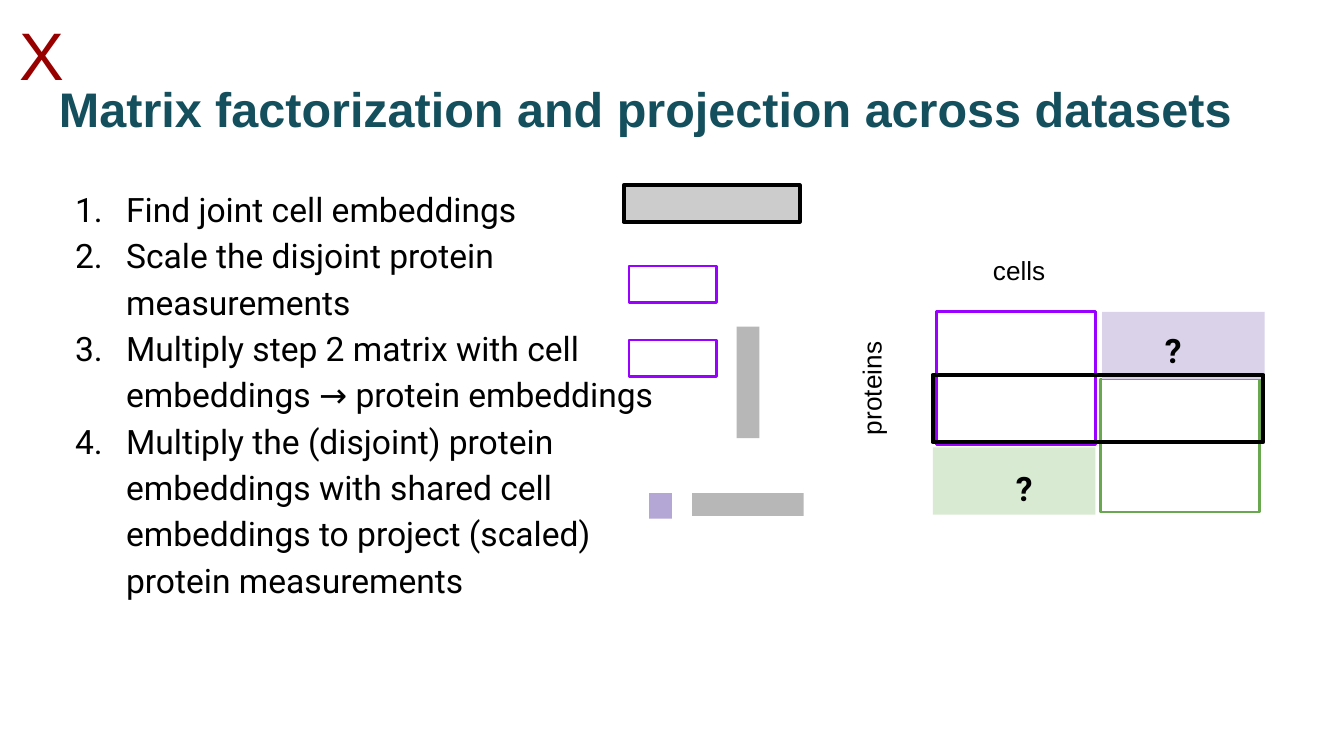
from dataclasses import dataclass

from lxml import etree
from pptx import Presentation
from pptx.dml.color import RGBColor
from pptx.enum.shapes import MSO_SHAPE
from pptx.enum.text import MSO_ANCHOR
from pptx.oxml.ns import qn
from pptx.util import Inches, Pt

RECTANGLE = MSO_SHAPE.RECTANGLE
TOP = MSO_ANCHOR.TOP


@dataclass(frozen=True)
class Theme:
    """Colours, fonts and sizes of the slide."""
    black: str = "000000"
    title: str = "134F5C"
    mark: str = "980000"
    purple: str = "9900FF"
    green: str = "6AA84F"
    pale_purple: str = "D9D2E9"
    pale_green: str = "D9EAD3"
    lilac: str = "B4A7D6"
    light_gray: str = "CCCCCC"
    gray: str = "B7B7B7"
    heading_font: str = "Arial"
    body_font: str = "Roboto"
    mark_size: int = 36
    title_size: int = 26
    body_size: int = 18
    label_size: int = 14
    thin: float = 1.5
    thick: float = 2.25


THEME = Theme()
STEPS = [
    "Find joint cell embeddings",
    "Scale the disjoint protein measurements",
    "Multiply step 2 matrix with cell embeddings → protein embeddings",
    "Multiply the (disjoint) protein embeddings with shared cell embeddings "
    "to project (scaled) protein measurements",
]


def add_text(page, place, text, size, font=THEME.heading_font,
             color=THEME.black, bold=False, rotation=0):
    """Add a wrapped text box in one style."""
    box = page.shapes.add_textbox(*map(Inches, place))
    box.rotation = rotation
    frame = box.text_frame
    frame.word_wrap = True
    frame.vertical_anchor = TOP
    frame.margin_left = frame.margin_right = Inches(0.1)
    frame.margin_top = frame.margin_bottom = Inches(0.1)
    frame.text = text
    for para in frame.paragraphs:
        for span in para.runs:
            span.font.name = font
            span.font.size = Pt(size)
            span.font.bold = bold
            span.font.color.rgb = RGBColor.from_string(color)
    return box


def add_steps(page, place, steps):
    """Add an automatically numbered list."""
    box = add_text(page, place, "\n".join(steps), THEME.body_size, THEME.body_font)
    for para in box.text_frame.paragraphs:
        para.line_spacing = 1.15
        properties = para._p.get_or_add_pPr()
        properties.set("marL", str(Inches(0.5)))
        properties.set("indent", str(Inches(-0.38)))
        font = etree.SubElement(properties, qn("a:buFont"))
        font.set("typeface", THEME.body_font)
        number = etree.SubElement(properties, qn("a:buAutoNum"))
        number.set("type", "arabicPeriod")


def add_block(page, place, fill=None, line=None, width=THEME.thin, rotation=0):
    """Add a matrix rectangle with an optional fill and outline."""
    block = page.shapes.add_shape(RECTANGLE, *map(Inches, place))
    block.shadow.inherit = False
    block.rotation = rotation
    if fill:
        block.fill.solid()
        block.fill.fore_color.rgb = RGBColor.from_string(fill)
    else:
        block.fill.background()
    if line:
        block.line.color.rgb = RGBColor.from_string(line)
        block.line.width = Pt(width)
    else:
        block.line.fill.background()


def add_dataset_grid(page):
    """Draw the two overlapping datasets and their missing parts."""
    add_block(page, (6.97, 2.32, 1.18, 0.99), line=THEME.purple)
    add_block(page, (8.19, 2.82, 1.18, 0.99), line=THEME.green)
    add_block(page, (8.2, 2.32, 1.21, 0.5), fill=THEME.pale_purple)
    add_block(page, (6.94, 3.33, 1.21, 0.5), fill=THEME.pale_green)
    add_block(page, (6.94, 2.79, 2.46, 0.5), line=THEME.black, width=THEME.thick)
    add_text(page, (6.1, 2.53, 0.97, 0.64), "proteins", THEME.label_size, rotation=270)
    add_text(page, (7.29, 1.79, 0.97, 0.64), "cells", THEME.label_size)


def add_step_matrices(page):
    """Draw the small matrices beside the steps."""
    add_block(page, (4.64, 1.38, 1.31, 0.27), THEME.light_gray, THEME.black, THEME.thick)
    for top in (1.98, 2.53):
        add_block(page, (4.68, top, 0.65, 0.27), line=THEME.purple)
    add_block(page, (5.15, 2.76, 0.83, 0.17), fill=THEME.gray, rotation=90)
    add_block(page, (4.83, 3.67, 0.17, 0.19), fill=THEME.lilac)
    add_block(page, (5.15, 3.67, 0.83, 0.17), fill=THEME.gray)


def add_unknowns(page):
    """Mark the two missing parts with question marks."""
    for left, top in ((7.46, 3.34), (8.57, 2.31)):
        box = add_text(page, (left, top, 0.43, 0.49), "?", THEME.body_size,
                       THEME.body_font, bold=True)
        para = box.text_frame.paragraphs[0]
        para.line_spacing = 1.15
        para.space_after = Pt(16)


def main():
    """Build and save the slide."""
    deck = Presentation()
    deck.slide_width = Inches(10)
    deck.slide_height = Inches(10 * 9 / 16)
    page = deck.slides.add_slide(deck.slide_layouts[6])
    add_steps(page, (0.34, 1.26, 4.66, 3.74), STEPS)
    add_text(page, (0.34, 0.49, 9.32, 0.63),
             "Matrix factorization and projection across datasets",
             THEME.title_size, color=THEME.title, bold=True)
    add_text(page, (0.05, 0, 0.49, 0.44), "X", THEME.mark_size, color=THEME.mark)
    add_dataset_grid(page)
    add_step_matrices(page)
    add_unknowns(page)
    deck.save("out.pptx")


if __name__ == "__main__":
    main()
